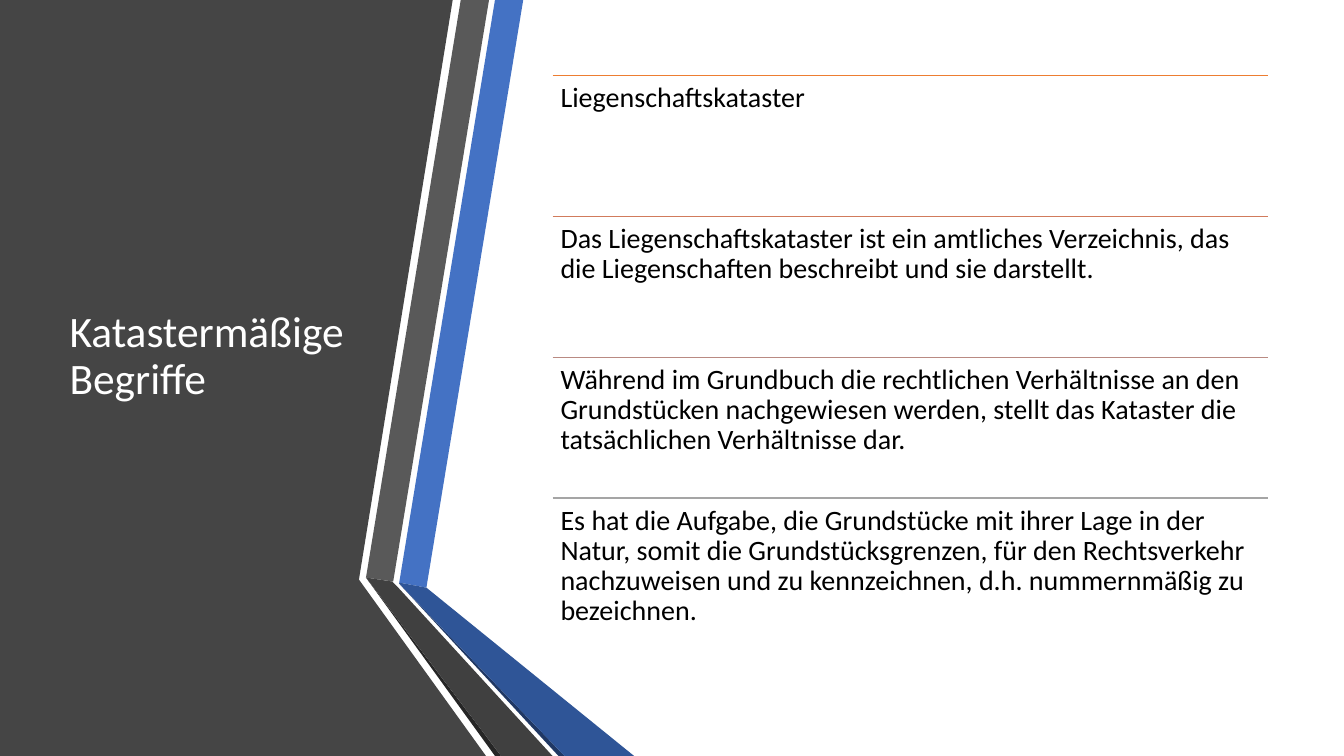
import pptx
import pptx.dml.color
import pptx.enum.shapes
import pptx.enum.text
import pptx.oxml
import pptx.util

Inches = pptx.util.Inches
RGBColor = pptx.dml.color.RGBColor
Anchor = pptx.enum.text.MSO_ANCHOR

WHITE = RGBColor(0xFF, 0xFF, 0xFF)
BLACK = RGBColor(0x00, 0x00, 0x00)
PANEL = RGBColor(0x45, 0x45, 0x45)
BLUE = RGBColor(0x44, 0x72, 0xC4)
BLUE_FOLD = RGBColor(0x2F, 0x55, 0x97)
BLUE_EDGE = RGBColor(0x20, 0x38, 0x64)
GREY = RGBColor(0x59, 0x59, 0x59)
GREY_FOLD = RGBColor(0x40, 0x40, 0x40)
GREY_EDGE = RGBColor(0x26, 0x26, 0x26)

# Content
TITLE = "Katastermäßige Begriffe"
STATEMENTS = [
    ("Liegenschaftskataster", RGBColor(0xED, 0x7D, 0x31)),
    ("Das Liegenschaftskataster ist ein amtliches Verzeichnis, das die "
     "Liegenschaften beschreibt und sie darstellt.", RGBColor(0xD1, 0x7B, 0x5C)),
    ("Während im Grundbuch die rechtlichen Verhältnisse an den Grundstücken "
     "nachgewiesen werden, stellt das Kataster die tatsächlichen Verhältnisse dar.",
     RGBColor(0xB9, 0x8A, 0x82)),
    ("Es hat die Aufgabe, die Grundstücke mit ihrer Lage in der Natur, somit die "
     "Grundstücksgrenzen, für den Rechtsverkehr nachzuweisen und zu kennzeichnen, "
     "d.h. nummernmäßig zu bezeichnen.", RGBColor(0xA5, 0xA5, 0xA5)),
]

# Side panel and folded ribbons: colour and corners in inches, back to front
OUTLINES = [
    (PANEL, [(0, 0), (4.49, 0), (3.56, 5.75), (4.82, 7.5), (0, 7.5)]),
    (BLUE, [(3.96, 5.78), (4.23, 5.83), (5.19, 0), (4.91, 0)]),
    (GREY, [(4.85, 0), (4.57, 0), (3.63, 5.73), (3.9, 5.77)]),
    (GREY_EDGE, [(3.63, 5.73), (4.91, 7.5), (4.97, 7.5)]),
    (BLUE_EDGE, [(3.96, 5.79), (5.54, 7.5), (5.6, 7.5)]),
    (BLUE_FOLD, [(3.96, 5.79), (5.6, 7.5), (6.29, 7.5), (4.23, 5.83), (3.96, 5.78)]),
    (GREY_FOLD, [(5.48, 7.5), (3.95, 5.83), (3.89, 5.77), (3.63, 5.73), (4.97, 7.5)]),
]

# Statement column
LEFT, TOP, WIDTH, ROW_HEIGHT = 5.48, 0.75, 7.1, 1.397
INSET = 0.08


def write_text(frame, text, *, size, color, anchor, inset=None, space_after=0):
    frame.word_wrap = True
    frame.auto_size = pptx.enum.text.MSO_AUTO_SIZE.NONE
    frame.vertical_anchor = anchor
    if inset is not None:
        frame.margin_left = frame.margin_right = Inches(inset)
        frame.margin_top = frame.margin_bottom = Inches(inset)
    para = frame.paragraphs[0]
    para.alignment = pptx.enum.text.PP_ALIGN.LEFT
    para.line_spacing = 0.9
    para.space_after = pptx.util.Pt(space_after)
    span = para.add_run()
    span.text = text
    span.font.name = "Calibri"
    span.font.size = pptx.util.Pt(size)
    span.font.color.rgb = color


def add_outline(page, color, corners):
    points = [(Inches(x), Inches(y)) for x, y in corners]
    builder = page.shapes.build_freeform(*points[0])
    builder.add_line_segments(points[1:], close=True)
    shape = builder.convert_to_shape()
    shape.shadow.inherit = False
    shape.fill.solid()
    shape.fill.fore_color.rgb = color
    shape.line.fill.background()


def add_rule(page, top, color):
    rule = page.shapes.add_connector(
        pptx.enum.shapes.MSO_CONNECTOR.STRAIGHT,
        Inches(LEFT), Inches(top), Inches(LEFT + WIDTH), Inches(top))
    rule.line.color.rgb = color
    rule.line.width = pptx.util.Pt(1)
    properties = rule._element.spPr
    properties.append(pptx.oxml.parse_xml(
        '<a:effectLst xmlns:a="http://schemas.openxmlformats.org/drawingml/2006/main"/>'))


def main():
    deck = pptx.Presentation()
    deck.slide_width, deck.slide_height = Inches(13.33), Inches(7.5)
    page = deck.slides.add_slide(deck.slide_layouts[5])

    for color, corners in OUTLINES:
        add_outline(page, color, corners)

    # Title, brought in front of the panel
    title = page.shapes.title
    title.left, title.top = Inches(0.59), Inches(0.75)
    title.width, title.height = Inches(3.04), Inches(5.58)
    write_text(title.text_frame, TITLE, size=31, color=WHITE, anchor=Anchor.MIDDLE)
    page.shapes._spTree.append(title._element)

    # Statements, each under its own rule
    for row, (text, color) in enumerate(STATEMENTS):
        top = TOP + row * ROW_HEIGHT
        add_rule(page, top, color)
        box = page.shapes.add_textbox(
            Inches(LEFT), Inches(top), Inches(WIDTH), Inches(ROW_HEIGHT))
        write_text(box.text_frame, text, size=20, color=BLACK,
                   anchor=Anchor.TOP, inset=INSET, space_after=7)

    deck.save("out.pptx")


if __name__ == "__main__":
    main()
